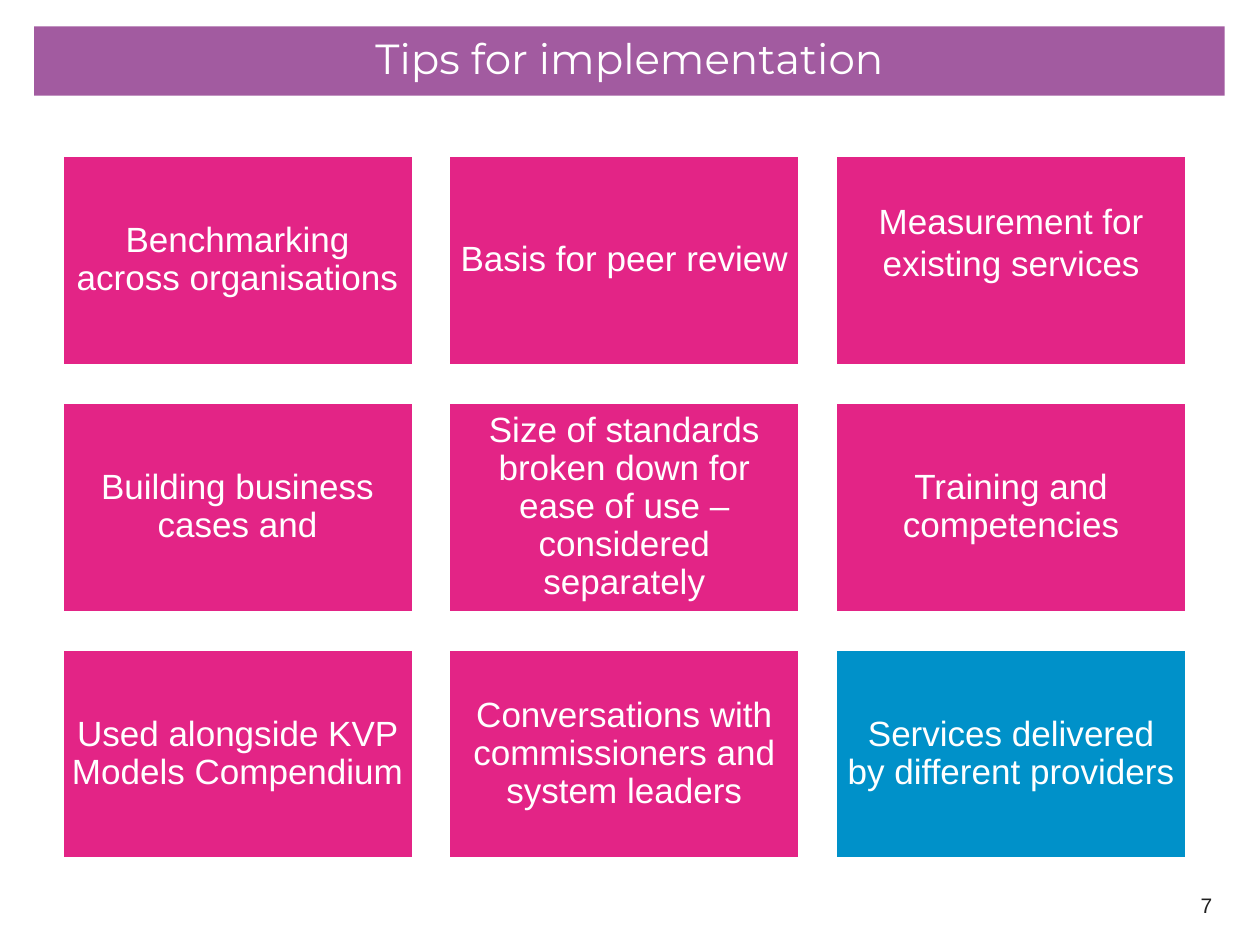
from pptx import Presentation
from pptx.dml.color import RGBColor
from pptx.enum.shapes import MSO_SHAPE
from pptx.enum.text import MSO_ANCHOR, MSO_AUTO_SIZE, PP_ALIGN
from pptx.util import Inches, Pt

TITLE = "Tips for implementation"
PAGE_NUMBER = "7"
TIPS = [
    ("Benchmarking across organisations", "pink"),
    ("Basis for peer review", "pink"),
    ("Measurement for existing services", "pink"),
    ("Building business cases and", "pink"),
    ("Size of standards broken down for ease of use – considered separately", "pink"),
    ("Training and competencies", "pink"),
    ("Used alongside KVP Models Compendium", "pink"),
    ("Conversations with commissioners and system leaders", "pink"),
    ("Services delivered by different providers", "blue"),
]
RAISED_TIP = "Measurement for existing services"
COLORS = {
    "purple": "A25BA0",
    "pink": "E32486",
    "blue": "0091C9",
    "white": "FFFFFF",
    "ink": "202020",
}
COLUMNS = 3
GRID_LEFT, GRID_TOP = 0.49, 1.23
TILE_WIDTH, TILE_HEIGHT = 2.79, 1.67
COLUMN_STEP, ROW_STEP = 3.07, 1.96
TILE_INSET, RAISED_INSET = 0.08, 0.37


def color(name):
    return RGBColor.from_string(COLORS[name])


def write(frame, text, size, font, ink, align, anchor):
    frame.word_wrap = True
    frame.auto_size = MSO_AUTO_SIZE.NONE
    frame.vertical_anchor = anchor
    paragraph = frame.paragraphs[0]
    paragraph.alignment = align
    run = paragraph.add_run()
    run.text = text
    run.font.size = Pt(size)
    run.font.name = font
    run.font.color.rgb = color(ink)
    return paragraph


def place(shape, left, top, width, height):
    shape.left, shape.top = Inches(left), Inches(top)
    shape.width, shape.height = Inches(width), Inches(height)


def add_title(slide):
    banner = slide.shapes.title
    place(banner, 0.27, 0.21, 9.45, 0.55)
    banner.fill.solid()
    banner.fill.fore_color.rgb = color("purple")
    heading = write(banner.text_frame, TITLE, 24, "Montserrat", "white",
                    PP_ALIGN.CENTER, MSO_ANCHOR.TOP)
    heading.space_before = Pt(6)


def add_tip(slide, index, text, fill):
    row, column = divmod(index, COLUMNS)
    tile = slide.shapes.add_shape(
        MSO_SHAPE.RECTANGLE,
        Inches(GRID_LEFT + column * COLUMN_STEP),
        Inches(GRID_TOP + row * ROW_STEP),
        Inches(TILE_WIDTH), Inches(TILE_HEIGHT))
    tile.shadow.inherit = False
    tile.fill.solid()
    tile.fill.fore_color.rgb = color(fill)
    tile.line.color.rgb = color("white")
    tile.line.width = Pt(2)
    raised = text == RAISED_TIP
    frame = tile.text_frame
    frame.margin_left = frame.margin_right = frame.margin_top = Inches(TILE_INSET)
    frame.margin_bottom = Inches(RAISED_INSET if raised else TILE_INSET)
    paragraph = write(frame, text, 20, "Arial", "white",
                      PP_ALIGN.CENTER, MSO_ANCHOR.MIDDLE)
    paragraph.line_spacing = 1.0 if raised else 0.9


def add_page_number(slide):
    number = slide.shapes.add_textbox(
        Inches(7.39), Inches(6.98), Inches(2.33), Inches(0.4))
    write(number.text_frame, PAGE_NUMBER, 12, "Arial", "ink",
          PP_ALIGN.RIGHT, MSO_ANCHOR.MIDDLE)


def main():
    deck = Presentation()
    deck.slide_width, deck.slide_height = Inches(10), Inches(7.5)
    slide = deck.slides.add_slide(deck.slide_layouts[5])
    add_title(slide)
    for index, (text, fill) in enumerate(TIPS):
        add_tip(slide, index, text, fill)
    add_page_number(slide)
    deck.save("out.pptx")


if __name__ == "__main__":
    main()
